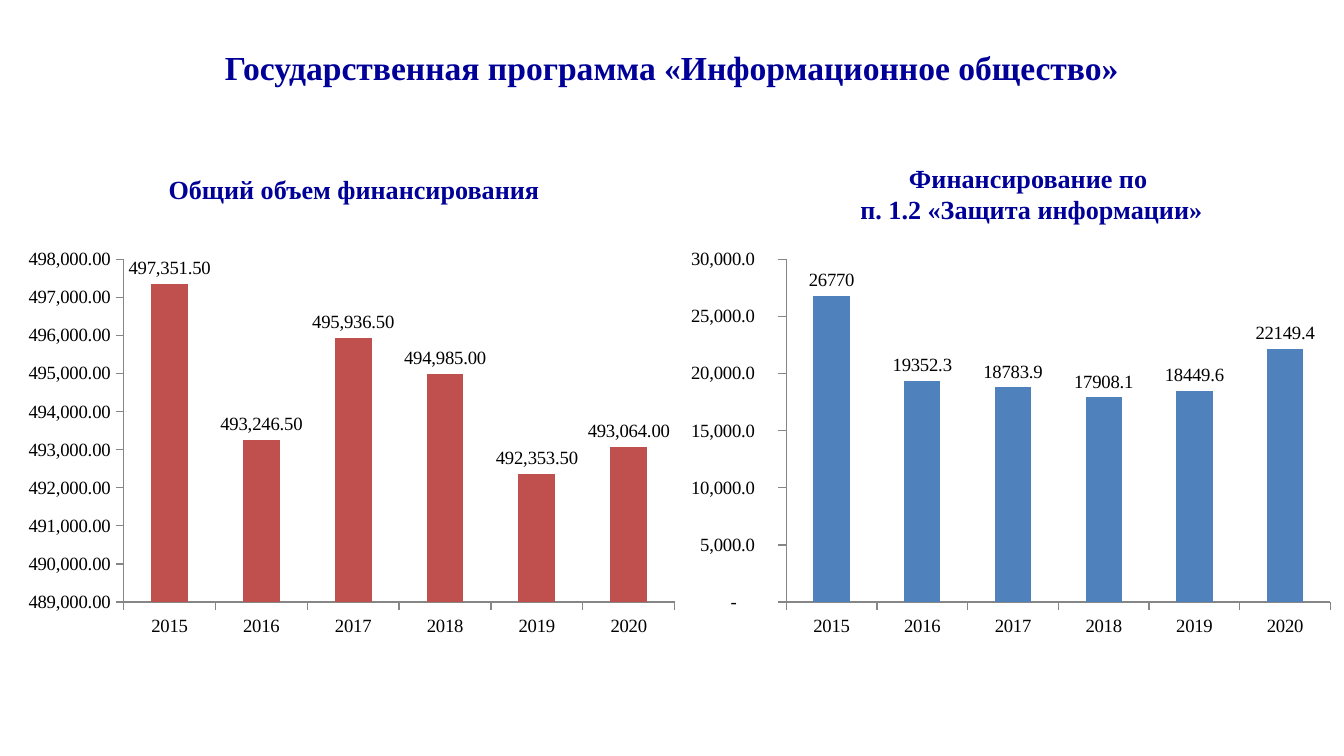
from lxml import etree
from pptx import Presentation
from pptx.chart.data import CategoryChartData
from pptx.dml.color import RGBColor
from pptx.enum.chart import XL_CHART_TYPE as ChartType, XL_LABEL_POSITION as LabelPosition
from pptx.enum.chart import XL_TICK_MARK as TickMark
from pptx.enum.text import MSO_ANCHOR as Anchor, PP_ALIGN as Align
from pptx.oxml.ns import qn
from pptx.util import Inches, Pt

WIDTH = 10
HEIGHT = WIDTH * 9 / 16
FONT = "Times New Roman"
NAVY, BLACK, GRAY = "000099", "000000", "868686"
YEARS = ["2015", "2016", "2017", "2018", "2019", "2020"]
TITLE = ["Государственная программа «Информационное общество»"]
CHART_TOP, CHART_HEIGHT = 1.79, 3
HEADING_WIDTH = 3.15
PLOT_TOP = 0.14 / CHART_HEIGHT

PANELS = [
    {
        "heading": ["Общий объем финансирования"],
        "heading_box": (1.06, 1.24, HEADING_WIDTH, 0.34),
        "chart_left": 0.12, "color": "C0504D",
        "values": [497351.5, 493246.5, 495936.5, 494985, 492353.5, 493064],
        "scale": (489000, 498000, 1000),
        "axis_format": "#,##0.00", "label_format": "#,##0.00",
        "plot": {"x": 0.16, "y": PLOT_TOP, "w": 0.82, "h": 0.85},
    },
    {
        "heading": ["Финансирование по ", "п. 1.2 «Защита информации»"],
        "heading_box": (6.1, 1.16, HEADING_WIDTH, 0.57),
        "chart_left": WIDTH / 2, "color": "4F81BD",
        "values": [26770, 19352.3, 18783.9, 17908.1, 18449.6, 22149.4],
        "scale": (0, 30000, 5000),
        "axis_format": '_-* #,##0.0_р_._-;-* #,##0.0_р_._-;_-* "-"??_р_._-;_-@_-',
        "label_format": "General",
        "plot": {"x": 0.17, "y": PLOT_TOP, "w": 0.81, "h": 0.85},
    },
]


def rgb(color):
    return RGBColor.from_string(color)


def style_font(font, size, color, bold=False):
    font.name, font.size, font.bold = FONT, Pt(size), bold
    font.color.rgb = rgb(color)


def add_heading(slide, lines, box, size, anchor):
    frame = slide.shapes.add_textbox(*map(Inches, box)).text_frame
    frame.word_wrap = True
    frame.vertical_anchor = anchor
    frame.text = "\n".join(lines)
    for paragraph in frame.paragraphs:
        paragraph.alignment = Align.CENTER
        style_font(paragraph.font, size, NAVY, True)


def place_plot(chart, shares):
    plot_area = chart._chartSpace.chart.plotArea
    for old in plot_area.findall(qn("c:layout")):
        plot_area.remove(old)
    layout = etree.Element(qn("c:layout"))
    plot_area.insert(0, layout)
    manual = etree.SubElement(layout, qn("c:manualLayout"))
    settings = {"layoutTarget": "inner", "xMode": "edge", "yMode": "edge", **shares}
    for name, value in settings.items():
        etree.SubElement(manual, qn(f"c:{name}")).set("val", str(value))


def add_column_chart(slide, panel):
    data = CategoryChartData()
    data.categories = YEARS
    data.add_series("Series 1", panel["values"])
    box = (panel["chart_left"], CHART_TOP, WIDTH / 2, CHART_HEIGHT)
    chart = slide.shapes.add_chart(ChartType.COLUMN_CLUSTERED, *map(Inches, box), data).chart
    chart.has_legend = chart.has_title = False
    style_font(chart.font, 10, BLACK)
    place_plot(chart, panel["plot"])

    for axis in (chart.category_axis, chart.value_axis):
        axis.has_major_gridlines = False
        axis.major_tick_mark = TickMark.OUTSIDE
        axis.minor_tick_mark = TickMark.NONE
        axis.format.line.color.rgb = rgb(GRAY)
        axis.format.line.width = Pt(0.75)
    axis = chart.value_axis
    axis.minimum_scale, axis.maximum_scale, axis.major_unit = panel["scale"]
    axis.tick_labels.number_format = panel["axis_format"]
    axis.tick_labels.number_format_is_linked = False

    plot = chart.plots[0]
    plot.gap_width = 150
    plot.vary_by_categories = False
    series = plot.series[0]
    series.format.fill.solid()
    series.format.fill.fore_color.rgb = rgb(panel["color"])
    labels = series.data_labels
    labels.show_value = True
    labels.position = LabelPosition.OUTSIDE_END
    labels.number_format = panel["label_format"]
    labels.number_format_is_linked = False


presentation = Presentation()
presentation.slide_width, presentation.slide_height = Inches(WIDTH), Inches(HEIGHT)
slide = presentation.slides.add_slide(presentation.slide_layouts[6])
add_heading(slide, TITLE, (0, 0.37, WIDTH, 0.33), 18, Anchor.BOTTOM)
for panel in PANELS:
    add_heading(slide, panel["heading"], panel["heading_box"], 14, Anchor.TOP)
    add_column_chart(slide, panel)
presentation.save("out.pptx")
